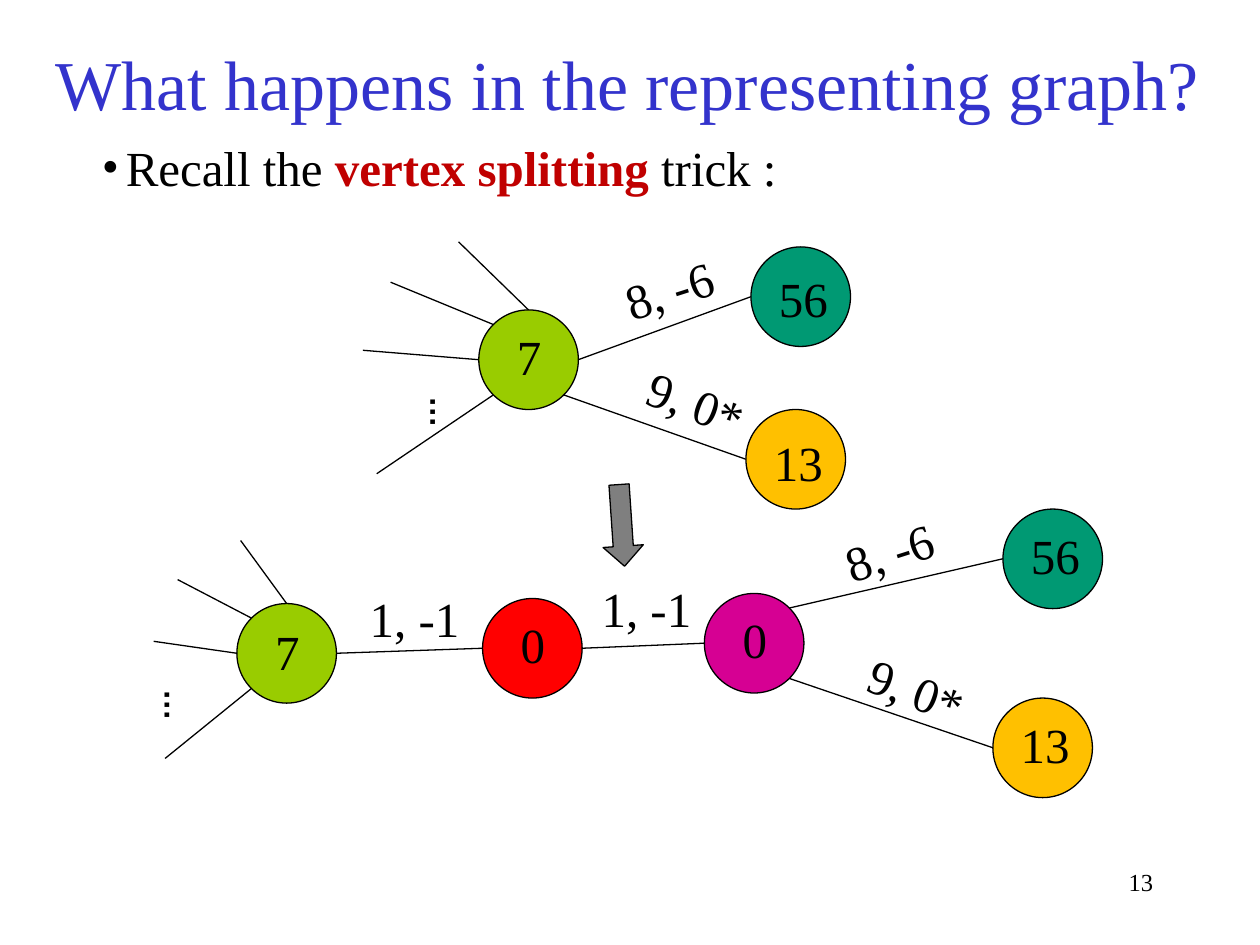
"""Build a slide that shows the vertex splitting trick on a small graph."""
from dataclasses import dataclass
from math import cos, radians, sin

from lxml import etree
from pptx import Presentation
from pptx.dml.color import RGBColor
from pptx.enum import shapes, text
from pptx.oxml import ns
from pptx.util import Inches, Pt


@dataclass(frozen=True)
class Theme:
    serif: str = "Times New Roman"
    sans: str = "Arial"
    title_color: str = "3333CC"
    accent: str = "C00000"
    ink: str = "000000"
    green: str = "99CC00"
    teal: str = "009973"
    amber: str = "FFC000"
    red: str = "FF0000"
    magenta: str = "D60093"
    title_size: int = 40
    body_size: int = 28
    dots_size: int = 18
    number_size: int = 14
    line_width: float = 0.75
    spacing: float = 0.1


THEME = Theme()
DIAMETER = 0.79
LABEL_HEIGHT = 0.57
SITES = {"right": 0, "lower right": 45, "lower left": 135, "left": 180,
         "upper left": 225, "top": 270, "upper right": 315}
SPOKE_SITES = ("top", "upper left", "left", "lower left")
LABEL_SHAPES = {"8, -6": (0.92, 342.2), "9, 0*": (0.99, 20.6), "1, -1": (0.92, 0)}
DIGIT_LABELS = {1: (0.2, 0.4), 2: (0.12, 0.59)}

TITLE = "What happens in the representing graph?"
BULLET = [("Recall the ", THEME.ink, False),
          ("vertex splitting", THEME.accent, True),
          (" trick :", THEME.ink, False)]
PAGE_NUMBER = "13"
ARROW = (4.61, 4.01, 0.65, 0.32, 86.1)

GRAPHS = [
    {
        "nodes": {  # name: left, top, text, fill, label drop
            "hub": (3.8, 2.46, "7", THEME.green, 0.08),
            "upper": (5.96, 1.96, "56", THEME.teal, 0.12),
            "lower": (5.92, 3.25, "13", THEME.amber, 0.13),
        },
        "spokes": [(3.64, 1.92), (3.1, 2.24), (2.88, 2.78), (2.99, 3.76)],
        "edges": [("hub", "right", "upper"), ("hub", "lower right", "lower")],
        "labels": [("8, -6", 4.85, 2.01), ("9, 0*", 5.03, 2.91)],
        "dots": (3.35, 3.01),
    },
    {
        "nodes": {
            "hub": (1.88, 4.79, "7", THEME.green, 0.09),
            "middle": (3.83, 4.75, "0", THEME.red, 0.08),
            "split": (5.59, 4.71, "0", THEME.magenta, 0.08),
            "upper": (7.96, 4.04, "56", THEME.teal, 0.08),
            "lower": (7.88, 5.54, "13", THEME.amber, 0.08),
        },
        "spokes": [(1.91, 4.29), (1.41, 4.6), (1.22, 5.09), (1.31, 6.02)],
        "edges": [("hub", "right", "middle"), ("middle", "right", "split"),
                  ("split", "upper right", "upper"),
                  ("split", "lower right", "lower")],
        "labels": [("1, -1", 2.83, 4.62), ("1, -1", 4.67, 4.54),
                   ("8, -6", 6.6, 4.09), ("9, 0*", 6.78, 5.19)],
        "dots": (1.24, 5.34),
    },
]


def add_text(page, place, spans, size, align, font=THEME.serif, wrap=True,
             rotation=0, spacing=THEME.spacing):
    box = page.shapes.add_textbox(*map(Inches, place))
    box.rotation = rotation
    box.text_frame.word_wrap = wrap
    para = box.text_frame.paragraphs[0]
    para.alignment = align
    para.space_before = Pt(round(size * spacing))
    for words, color, bold in spans:
        span = para.add_run()
        span.text = words
        span.font.name = font
        span.font.size = Pt(size)
        span.font.bold = bold
        span.font.color.rgb = RGBColor.from_string(color)
    return box


def add_label(page, words, left, top, width, rotation=0):
    add_text(page, (left, top, width, LABEL_HEIGHT), [(words, THEME.ink, False)],
             THEME.body_size, text.PP_ALIGN.CENTER, wrap=False, rotation=rotation)


def add_outlined(page, preset, place, color):
    shape = page.shapes.add_shape(preset, *map(Inches, place))
    shape.shadow.inherit = False
    shape.fill.solid()
    shape.fill.fore_color.rgb = RGBColor.from_string(color)
    shape.line.color.rgb = RGBColor.from_string(THEME.ink)
    shape.line.width = Pt(THEME.line_width)
    return shape


def add_line(page, start, end):
    line = page.shapes.add_connector(shapes.MSO_CONNECTOR.STRAIGHT,
                                     *map(Inches, (*start, *end)))
    line.line.color.rgb = RGBColor.from_string(THEME.ink)
    line.line.width = Pt(THEME.line_width)
    etree.SubElement(line._element.spPr, ns.qn("a:effectLst"))


def site_point(node, site):
    left, top = node[:2]
    radius, angle = DIAMETER / 2, radians(SITES[site])
    return left + radius * (1 + cos(angle)), top + radius * (1 + sin(angle))


def add_graph(page, graph):
    nodes = graph["nodes"]
    for site, end in zip(SPOKE_SITES, graph["spokes"]):
        add_line(page, end, site_point(nodes["hub"], site))
    for source, site, target in graph["edges"]:
        add_line(page, site_point(nodes[source], site),
                 site_point(nodes[target], "left"))
    for left, top, words, color, drop in nodes.values():
        add_outlined(page, shapes.MSO_SHAPE.OVAL,
                     (left, top, DIAMETER, DIAMETER), color)
        inset, width = DIGIT_LABELS[len(words)]
        add_label(page, words, left + inset, top + drop, width)
    for words, left, top in graph["labels"]:
        add_label(page, words, left, top, *LABEL_SHAPES[words])
    add_text(page, (*graph["dots"], 0.33, 0.4), [("…", THEME.ink, True)],
             THEME.dots_size, text.PP_ALIGN.RIGHT, font=THEME.sans, rotation=90)


def add_bullet(page):
    box = add_text(page, (0.71, 1.04, 8.83, 1.04), BULLET, THEME.body_size,
                   text.PP_ALIGN.LEFT)
    properties = box.text_frame.paragraphs[0]._p.get_or_add_pPr()
    properties.set("marL", str(Inches(0.19)))
    properties.set("indent", str(Inches(-0.19)))
    etree.SubElement(properties, ns.qn("a:buFont"), typeface=THEME.serif)
    etree.SubElement(properties, ns.qn("a:buChar"), char="•")


def add_arrow(page):
    *place, rotation = ARROW
    arrow = add_outlined(page, shapes.MSO_SHAPE.RIGHT_ARROW, place, THEME.ink)
    arrow.rotation = rotation
    color = arrow._element.spPr.find(ns.qn("a:solidFill"))[0]
    etree.SubElement(color, ns.qn("a:alpha"), val="50000")


def main():
    deck = Presentation()
    deck.slide_width, deck.slide_height = Inches(10), Inches(7.5)
    page = deck.slides.add_slide(deck.slide_layouts[6])
    title = add_text(page, (0.21, 0.29, 9.54, 0.73),
                     [(TITLE, THEME.title_color, False)], THEME.title_size,
                     text.PP_ALIGN.CENTER, spacing=0)
    title.text_frame.vertical_anchor = text.MSO_ANCHOR.MIDDLE
    add_bullet(page)
    add_arrow(page)
    for graph in GRAPHS:
        add_graph(page, graph)
    add_text(page, (7.17, 6.83, 2.08, 0.5), [(PAGE_NUMBER, THEME.ink, False)],
             THEME.number_size, text.PP_ALIGN.RIGHT, spacing=0)
    deck.save("out.pptx")


if __name__ == "__main__":
    main()
